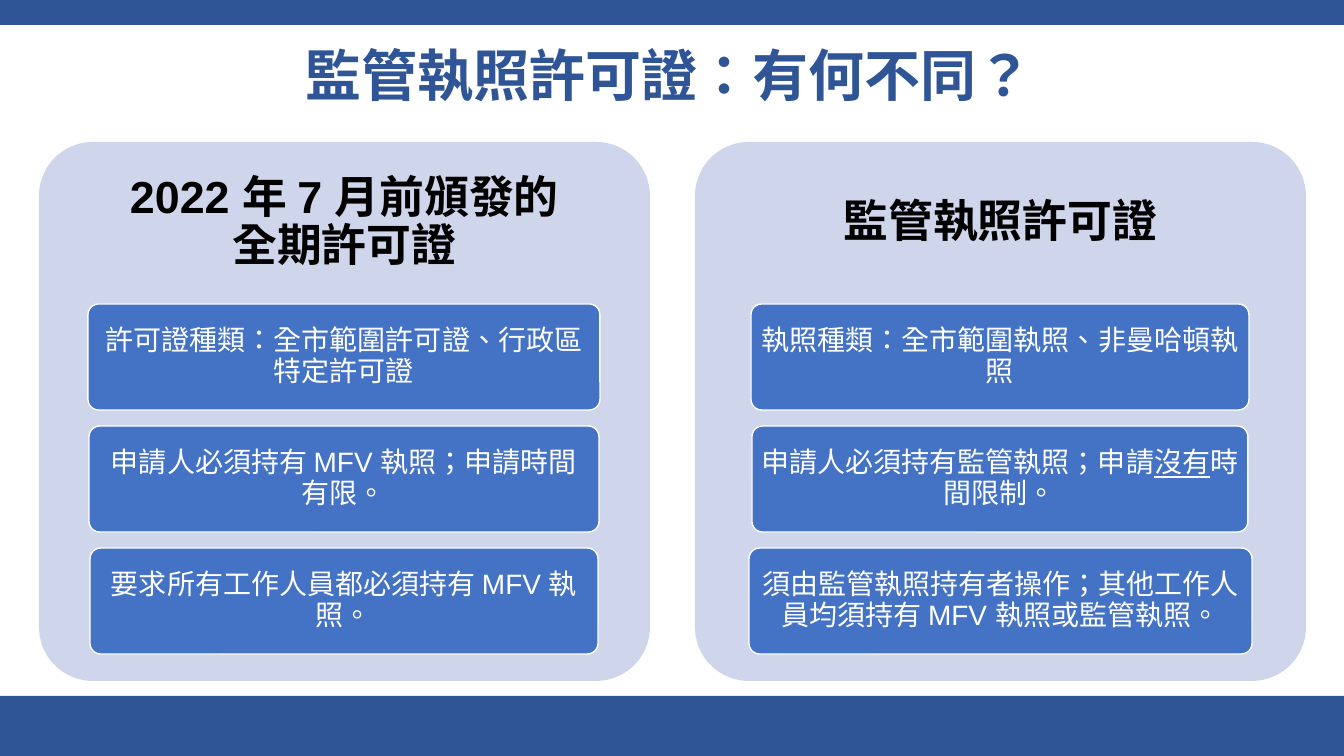
from dataclasses import dataclass

from lxml import etree
from pptx import Presentation
from pptx.dml.color import RGBColor
from pptx.enum.shapes import MSO_SHAPE
from pptx.enum.text import MSO_ANCHOR, PP_ALIGN
from pptx.oxml.ns import qn
from pptx.util import Emu, Pt

RECT = MSO_SHAPE.RECTANGLE
ROUNDED = MSO_SHAPE.ROUNDED_RECTANGLE
MIDDLE = MSO_ANCHOR.MIDDLE
CENTER = PP_ALIGN.CENTER
EMU_PER_PX = 914400 / 100.8


@dataclass(frozen=True)
class Theme:
    navy: str = "2F5597"
    panel: str = "CFD5EA"
    card: str = "4472C4"
    white: str = "FFFFFF"
    black: str = "000000"
    latin: str = "Arial"
    cjk: str = "Noto Sans CJK TC"
    title_size: int = 40
    heading_size: int = 32
    card_size: int = 20


theme = Theme()


def add_box(kind, left, top, width, height, fill, line=None):
    box = [Emu(round(v * EMU_PER_PX)) for v in (left, top, width, height)]
    sp = slide.shapes.add_shape(kind, *box) if kind else slide.shapes.add_textbox(*box)
    if kind:
        sp.shadow.inherit = False
        sp.fill.solid()
        sp.fill.fore_color.rgb = RGBColor.from_string(fill)
        if line:
            sp.line.color.rgb = RGBColor.from_string(line)
            sp.line.width = Pt(1)
        else:
            sp.line.fill.background()
    if kind == ROUNDED:
        sp.adjustments[0] = 0.1
    return sp


def write(sp, lines, size, color, font, inset_x, inset_y, bold=False):
    tf = sp.text_frame
    tf.word_wrap = True
    tf.vertical_anchor = MIDDLE
    tf.margin_left = tf.margin_right = Emu(round(inset_x * EMU_PER_PX))
    tf.margin_top = tf.margin_bottom = Emu(round(inset_y * EMU_PER_PX))
    p = tf.paragraphs[0]
    p.alignment = CENTER
    p.line_spacing = 0.9
    for i, line in enumerate(lines):
        if i:
            p.add_line_break()
        for text, underline in line:
            r = p.add_run()
            r.text = text
            r.font.size = Pt(size)
            r.font.bold = bold
            r.font.underline = underline
            r.font.color.rgb = RGBColor.from_string(color)
            r.font.name = font
            rPr = r._r.get_or_add_rPr()
            rPr.set("lang", "zh-TW")
            etree.SubElement(rPr, qn("a:ea")).set("typeface", theme.cjk)


prs = Presentation()
prs.slide_width = Emu(round(1344 * EMU_PER_PX))
prs.slide_height = Emu(round(756 * EMU_PER_PX))
slide = prs.slides.add_slide(prs.slide_layouts[6])

for top, height in ((0, 25), (696, 60)):
    add_box(RECT, 0, top, 1344, height, theme.navy)

title = add_box(None, 0, 40, 1338, 76, None)
write(title, [[("監管執照許可證：有何不同？", False)]],
      theme.title_size, theme.navy, theme.cjk, 10, 5, bold=True)

PANEL_TOP, PANEL_W, PANEL_H, PANEL_STEP = 142, 611, 539, 656
CARD_TOP, CARD_H, CARD_STEP = 304, 106, 122

panels = [
    (theme.latin, ["2022 年 7 月前頒發的", "全期許可證"], [
        (512, [("許可證種類：全市範圍許可證、行政區特定許可證", False)]),
        (510, [("申請人必須持有 MFV 執照；申請時間有限。", False)]),
        (508, [("要求所有工作人員都必須持有 MFV 執照。", False)]),
    ]),
    (theme.cjk, ["監管執照許可證"], [
        (498, [("執照種類：全市範圍執照、非曼哈頓執照", False)]),
        (496, [("申請人必須持有監管執照；申請", False), ("沒有", True), ("時間限制。", False)]),
        (503, [("須由監管執照持有者操作；其他工作人員均須持有 MFV 執照或監管執照。", False)]),
    ]),
]

for col, (font, heading, cards) in enumerate(panels):
    left = 39 + col * PANEL_STEP
    add_box(ROUNDED, left, PANEL_TOP, PANEL_W, PANEL_H, theme.panel)
    head = add_box(None, left, PANEL_TOP, PANEL_W, 162, None)
    write(head, [[(text, False)] for text in heading],
          theme.heading_size, theme.black, font, 13, 13, bold=True)
    for row, (width, runs) in enumerate(cards):
        card = add_box(ROUNDED, left + (PANEL_W - width) // 2, CARD_TOP + row * CARD_STEP,
                       width, CARD_H, theme.card, theme.white)
        write(card, [runs], theme.card_size, theme.white, theme.latin, 6, 4)

prs.save("out.pptx")
